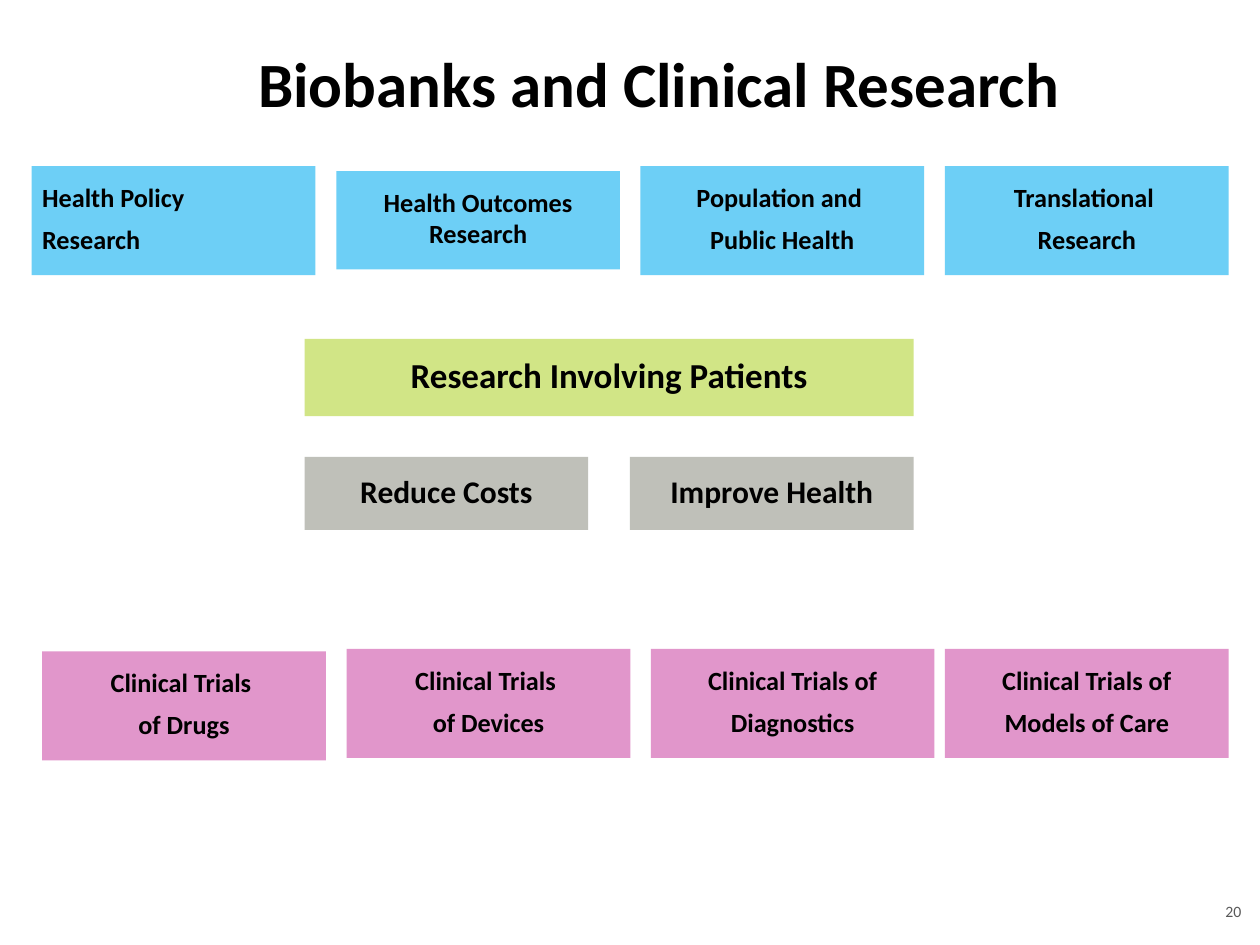
import pptx
import pptx.dml.color
import pptx.enum.shapes
import pptx.enum.text
import pptx.util

Cm = pptx.util.Cm
ALIGN = pptx.enum.text.PP_ALIGN
ANCHOR = pptx.enum.text.MSO_ANCHOR
COLORS = {
    "text": "000000",
    "number": "595959",
    "research": "6DCFF6",
    "trials": "E196CB",
    "patients": "D1E586",
    "benefits": "BFC0B9",
}
BOX_FRAME = {
    "vertical_anchor": ANCHOR.MIDDLE,
    "margin_left": Cm(0.21),
    "margin_right": Cm(0.21),
    "margin_top": Cm(0.3),
    "margin_bottom": Cm(0.41),
    "auto_size": pptx.enum.text.MSO_AUTO_SIZE.SHAPE_TO_FIT_TEXT,
}
NUMBER_FRAME = {
    "vertical_anchor": ANCHOR.MIDDLE,
    "margin_left": 0,
    "margin_right": 0,
    "margin_top": 0,
    "margin_bottom": 0,
    "word_wrap": True,
}
TITLE_FRAME = {"vertical_anchor": ANCHOR.TOP, "word_wrap": True}
BOX_WIDTH = 5.72
TWO_LINES = 2.2


def set_attributes(target, values):
    for name, value in values.items():
        setattr(target, name, value)


class SlideBuilder:
    font_name = "Calibri"

    def __init__(self, slide):
        self.slide = slide

    def fill_text(self, shape, lines, frame, size, color="text", bold=True,
                  alignment=ALIGN.CENTER, space_before=0):
        text_frame = shape.text_frame
        text_frame.text = "\n".join(lines)
        set_attributes(text_frame, frame)
        for paragraph in text_frame.paragraphs:
            set_attributes(paragraph, {
                "alignment": alignment,
                "space_before": pptx.util.Pt(space_before),
            })
            font = paragraph.runs[0].font
            set_attributes(font, {
                "name": self.font_name,
                "size": pptx.util.Pt(size),
                "bold": bold,
            })
            font.color.rgb = pptx.dml.color.RGBColor.from_string(COLORS[color])

    def title(self, text, left, top, width, height):
        shape = self.slide.shapes.title
        set_attributes(shape, {
            "left": Cm(left), "top": Cm(top),
            "width": Cm(width), "height": Cm(height),
        })
        self.fill_text(shape, [text], TITLE_FRAME, 36)

    def number(self, text, left, top, width, height):
        shape = self.slide.shapes.add_textbox(
            Cm(left), Cm(top), Cm(width), Cm(height))
        self.fill_text(shape, [text], NUMBER_FRAME, 9, "number", bold=False)

    def box(self, lines, fill, left, top, width=BOX_WIDTH, height=TWO_LINES,
            size=15, alignment=ALIGN.CENTER, wrap=True):
        shape = self.slide.shapes.add_shape(
            pptx.enum.shapes.MSO_SHAPE.RECTANGLE,
            Cm(left), Cm(top), Cm(width), Cm(height))
        shape.shadow.inherit = False
        shape.fill.solid()
        shape.fill.fore_color.rgb = pptx.dml.color.RGBColor.from_string(COLORS[fill])
        shape.line.fill.background()
        self.fill_text(shape, lines, {**BOX_FRAME, "word_wrap": wrap}, size,
                       alignment=alignment, space_before=6)


def main():
    presentation = pptx.Presentation()
    set_attributes(presentation, {"slide_width": Cm(25.4), "slide_height": Cm(19.05)})
    slide = presentation.slides.add_slide(presentation.slide_layouts[5])
    builder = SlideBuilder(slide)

    builder.title("Biobanks and Clinical Research", 2.72, 0.76, 21.13, 2.54)
    builder.number("20", 24.38, 17.86, 0.97, 1.02)

    builder.box(["Health Policy", "Research"], "research", 0.64, 3.35,
                alignment=ALIGN.LEFT, wrap=False)
    builder.box(["Health Outcomes Research"], "research", 6.78, 3.45, height=1.98)
    builder.box(["Population and ", "Public Health"], "research", 12.91, 3.35)
    builder.box(["Translational ", "Research"], "research", 19.05, 3.35)

    trials = [
        (["Clinical Trials ", "of Drugs"], 0.85, 13.13),
        (["Clinical Trials ", "of Devices"], 6.99, 13.08),
        (["Clinical Trials of", "Diagnostics"], 13.12, 13.08),
        (["Clinical Trials of", "Models of Care"], 19.05, 13.08),
    ]
    for lines, left, top in trials:
        builder.box(lines, "trials", left, top)

    builder.box(["Research Involving Patients"], "patients", 6.14, 6.83,
                width=12.28, height=1.56, size=20)
    for text, left in [("Reduce Costs", 6.14), ("Improve Health", 12.7)]:
        builder.box([text], "benefits", left, 9.21, height=1.47, size=18)

    presentation.save("out.pptx")


if __name__ == "__main__":
    main()
